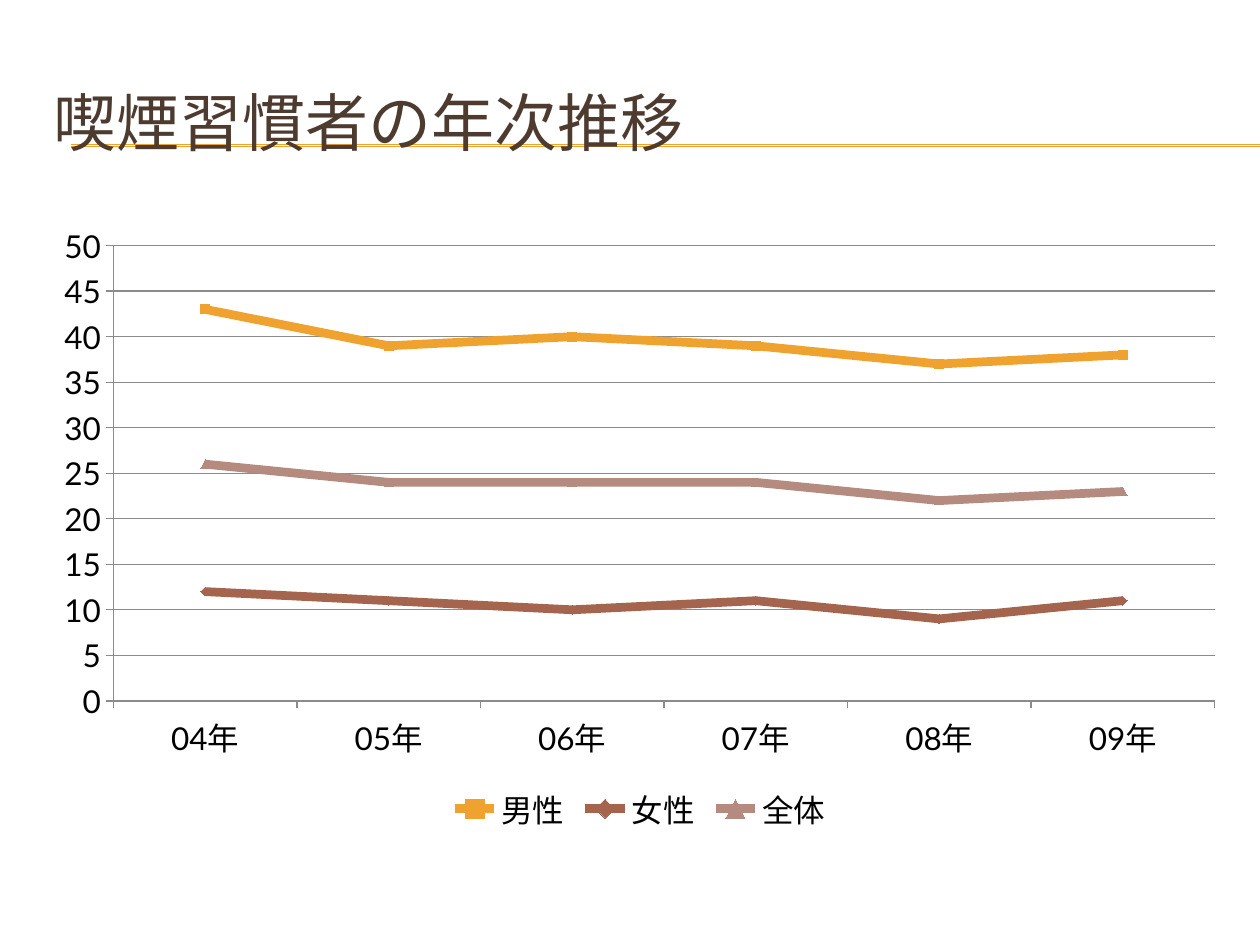
from dataclasses import dataclass

from lxml.etree import SubElement
from pptx import Presentation
from pptx.chart.data import CategoryChartData
from pptx.dml.color import RGBColor
from pptx.enum.chart import XL_CHART_TYPE as Chart, XL_LEGEND_POSITION as Legend
from pptx.enum.chart import XL_MARKER_STYLE as Marker, XL_TICK_MARK as Tick
from pptx.enum.shapes import MSO_CONNECTOR as Connector
from pptx.enum.text import MSO_ANCHOR as Anchor
from pptx.oxml import parse_xml
from pptx.oxml.ns import nsdecls, qn
from pptx.util import Inches, Pt


@dataclass(frozen=True)
class Theme:
    font: str = "Lato"
    title: str = "4E3B30"
    text: str = "000000"
    rule: str = "F0A22E"
    axis: str = "8B8B8B"
    title_size: float = 36
    chart_size: float = 18
    thin: float = 0.75
    thick: float = 5


class SlideBuilder:
    """Places elements by shares of the slide's width and height."""

    def __init__(self, prs, theme):
        self.prs, self.theme = prs, theme
        self.s = prs.slides.add_slide(prs.slide_layouts[6])

    def box(self, *shares):
        sizes = (self.prs.slide_width, self.prs.slide_height) * 2
        return [round(share * size) for share, size in zip(shares, sizes)]

    def font(self, font, size, color):
        values = {"name": self.theme.font, "size": Pt(size), "bold": False}
        for key, value in values.items():
            setattr(font, key, value)
        font.color.rgb = RGBColor.from_string(color)

    def stroke(self, line, color, width):
        line.color.rgb = RGBColor.from_string(color)
        line.width = Pt(width)

    def rule(self, *ends):
        line = self.s.shapes.add_connector(Connector.STRAIGHT, *self.box(*ends))
        self.stroke(line.line, self.theme.rule, self.theme.thin)
        SubElement(line._element.spPr, qn("a:effectLst"))

    def title(self, text, *place):
        tf = self.s.shapes.add_textbox(*self.box(*place)).text_frame
        for key, value in {"word_wrap": True, "vertical_anchor": Anchor.MIDDLE}.items():
            setattr(tf, key, value)
        r = tf.paragraphs[0].add_run()
        r.text = text
        self.font(r.font, self.theme.title_size, self.theme.title)

    def line_chart(self, categories, series, plot, *place):
        data = CategoryChartData()
        data.categories = categories
        for name, values, *_ in series:
            data.add_series(name, values)
        chart = self.s.shapes.add_chart(Chart.LINE_MARKERS, *self.box(*place), data).chart
        self.font(chart.font, self.theme.chart_size, self.theme.text)
        chart.has_title = False

        # Legend
        chart.has_legend = True
        for key, value in {"position": Legend.BOTTOM, "include_in_layout": False}.items():
            setattr(chart.legend, key, value)

        # Axes and gridlines
        values = chart.value_axis
        scale = {"minimum_scale": 0, "maximum_scale": 50, "major_unit": 5,
                 "has_major_gridlines": True}
        for key, value in scale.items():
            setattr(values, key, value)
        for axis in (chart.category_axis, values):
            axis.major_tick_mark = Tick.OUTSIDE
        for part in (chart.category_axis, values, values.major_gridlines):
            self.stroke(part.format.line, self.theme.axis, self.theme.thin)

        # Series
        chart.plots[0].vary_by_categories = False
        for line, (_, _, color, marker) in zip(chart.plots[0].series, series):
            line.smooth = False
            self.stroke(line.format.line, color, self.theme.thick)
            line.marker.style, line.marker.size = marker, 5
            line.marker.format.fill.solid()
            line.marker.format.fill.fore_color.rgb = RGBColor.from_string(color)
            line.marker.format.line.fill.background()

        # Inner plot area, as shares of the chart
        shares = "".join(f'<c:{key} val="{share}"/>' for key, share in zip("xywh", plot))
        area = chart._chartSpace.chart.plotArea
        for old in area.findall(qn("c:layout")):
            area.remove(old)
        area.insert(0, parse_xml(
            f'<c:layout {nsdecls("c")}><c:manualLayout><c:layoutTarget val="inner"/>'
            f'<c:xMode val="edge"/><c:yMode val="edge"/>{shares}'
            '</c:manualLayout></c:layout>'))


def main():
    prs = Presentation()
    prs.slide_width, prs.slide_height = Inches(10), Inches(7.5)
    slide = SlideBuilder(prs, Theme())
    left, width = 0.033, 0.95

    # Double rule under the title
    for y in (0.153, 0.155):
        slide.rule(0.056, y, 1, y)

    slide.title("喫煙習慣者の年次推移", left, 0.067, width, 0.123)

    # Smoking rate by year
    slide.line_chart(
        [f"{year:02}年" for year in range(4, 10)],
        [("男性", (43, 39, 40, 39, 37, 38), "F0A22E", Marker.SQUARE),
         ("女性", (12, 11, 10, 11, 9, 11), "A5644E", Marker.DIAMOND),
         ("全体", (26, 24, 24, 24, 22, 23), "B58B80", Marker.TRIANGLE)],
        (0.06, 0.05, 0.92, 0.73),
        left, 0.227, width, 0.66)

    prs.save("out.pptx")


if __name__ == "__main__":
    main()
